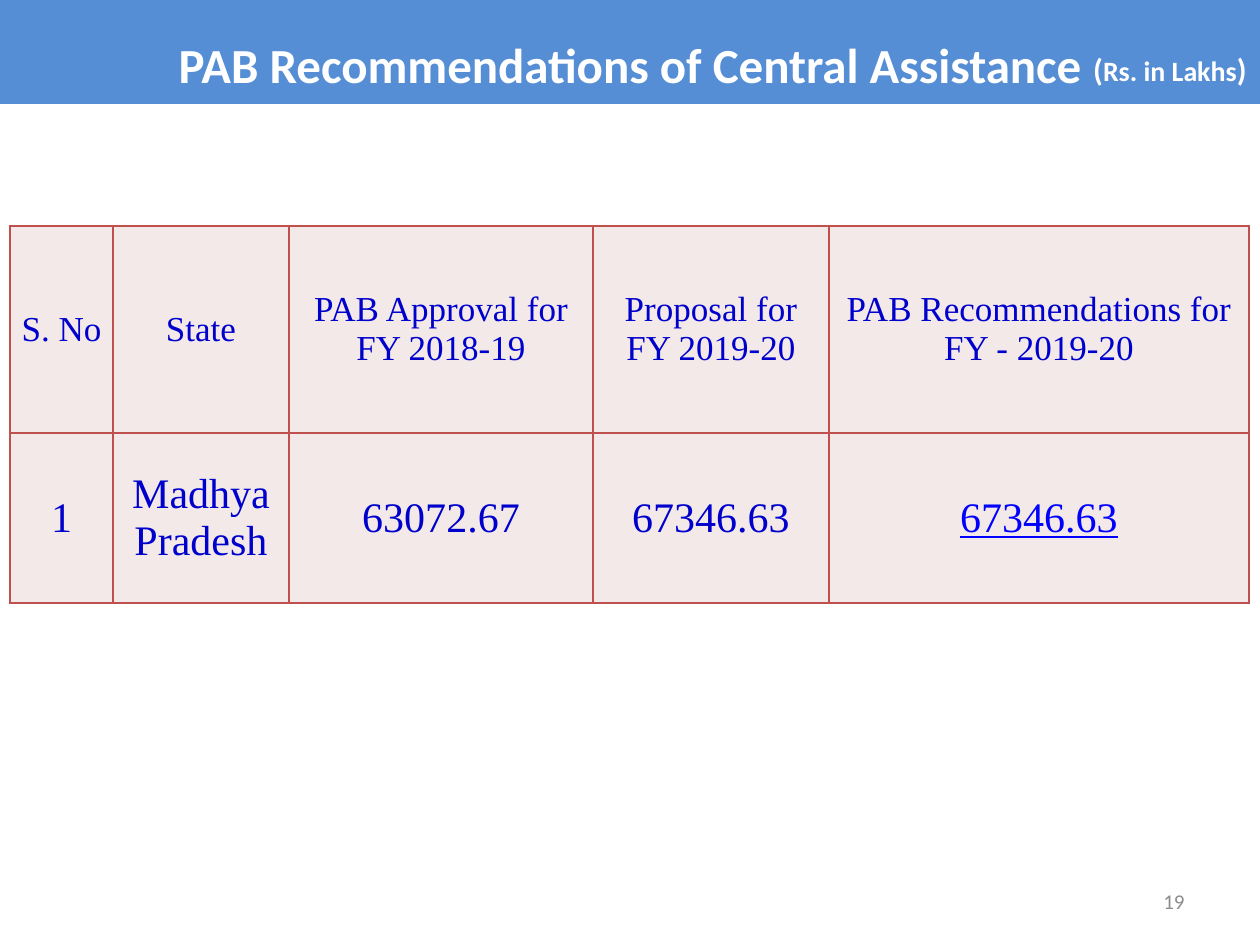
import pptx
import pptx.util
import pptx.dml.color
import pptx.enum.text
import pptx.oxml
import pptx.oxml.ns

RGBColor = pptx.dml.color.RGBColor
ALIGN = pptx.enum.text.PP_ALIGN
ANCHOR = pptx.enum.text.MSO_ANCHOR

BAND_BLUE = RGBColor(0x55, 0x8E, 0xD5)
WHITE = RGBColor(0xFF, 0xFF, 0xFF)
CELL_PINK = RGBColor(0xF4, 0xE9, 0xE9)
BORDER_RED = RGBColor(0xC0, 0x50, 0x4D)
TEXT_BLUE = RGBColor(0x00, 0x00, 0xCC)
TOTAL_BLUE = RGBColor(0x00, 0x00, 0xFF)
NUMBER_GREY = RGBColor(0x8C, 0x8C, 0x8C)


def px(count):
    return pptx.util.Emu(round(count * 914400 / 126))


def add_run(paragraph, text, size, color, name="Calibri", **styles):
    run = paragraph.add_run()
    run.text = text
    run.font.color.rgb = color
    styles.update(size=pptx.util.Pt(size), name=name)
    for attribute, value in styles.items():
        setattr(run.font, attribute, value)


presentation = pptx.Presentation()
presentation.slide_width, presentation.slide_height = px(1260), px(945)
slide = presentation.slides.add_slide(presentation.slide_layouts[5])

# Title band
title = slide.shapes.title
title.left, title.top, title.width, title.height = px(0), px(0), px(1260), px(104)
title.fill.solid()
title.fill.fore_color.rgb = BAND_BLUE
title.text_frame.auto_size = pptx.enum.text.MSO_AUTO_SIZE.NONE
title.text_frame.vertical_anchor = ANCHOR.MIDDLE
paragraph = title.text_frame.paragraphs[0]
paragraph.alignment = ALIGN.CENTER
paragraph.line_spacing = 1.4
add_run(paragraph, "PAB Recommendations of Central Assistance", 28, WHITE, bold=True)

# Assistance table
columns = [103, 176, 304, 236, 420]
rows = [207, 170]
contents = [
    ["S. No", "State", "PAB Approval for FY 2018-19", "Proposal for\nFY 2019-20",
     "PAB Recommendations for\nFY - 2019-20"],
    ["1", "Madhya Pradesh", "63072.67", "67346.63", "67346.63"],
]
table = slide.shapes.add_table(len(rows), len(columns), px(10), px(226),
                               px(sum(columns)), px(sum(rows))).table
for column, width in zip(table.columns, columns):
    column.width = px(width)
for row, height in zip(table.rows, rows):
    row.height = px(height)

for row_index, texts in enumerate(contents):
    for column_index, text in enumerate(texts):
        cell = table.cell(row_index, column_index)
        is_total = row_index == 1 and column_index == len(columns) - 1
        narrow = row_index == 1 and 0 < column_index < len(columns) - 1
        side = px(1 if narrow else 9)
        cell_format = {"vertical_anchor": ANCHOR.MIDDLE, "margin_left": side,
                       "margin_right": side, "margin_top": 0, "margin_bottom": 0}
        for attribute, value in cell_format.items():
            setattr(cell, attribute, value)

        for line_index, line in enumerate(text.split("\n")):
            frame = cell.text_frame
            paragraph = frame.add_paragraph() if line_index else frame.paragraphs[0]
            paragraph.alignment = ALIGN.CENTER
            add_run(paragraph, line, 24 if row_index else 20,
                    TOTAL_BLUE if is_total else TEXT_BLUE, "Times New Roman",
                    bold=False, underline=is_total)

        # Borders come before the fill in the cell properties
        properties = cell._tc.get_or_add_tcPr()
        for edge in ("lnL", "lnR", "lnT", "lnB"):
            properties.append(pptx.oxml.parse_xml(
                f'<a:{edge} {pptx.oxml.ns.nsdecls("a")} w="12700"><a:solidFill>'
                f'<a:srgbClr val="{BORDER_RED}"/></a:solidFill></a:{edge}>'))
        cell.fill.solid()
        cell.fill.fore_color.rgb = CELL_PINK

# Unit note in the band
note = slide.shapes.add_textbox(px(1080), px(44), px(180), px(50))
note.text_frame.word_wrap = False
paragraph = note.text_frame.paragraphs[0]
paragraph.alignment = ALIGN.CENTER
for text, size in [("(", 18), ("Rs. in Lakhs", 16), (")", 18)]:
    add_run(paragraph, text, size, WHITE, bold=True)

# Slide number
number = slide.shapes.add_textbox(px(903), px(876), px(294), px(50))
number.text_frame.word_wrap = True
number.text_frame.vertical_anchor = ANCHOR.MIDDLE
paragraph = number.text_frame.paragraphs[0]
paragraph.alignment = ALIGN.RIGHT
add_run(paragraph, "19", 12, NUMBER_GREY)

presentation.save("out.pptx")
